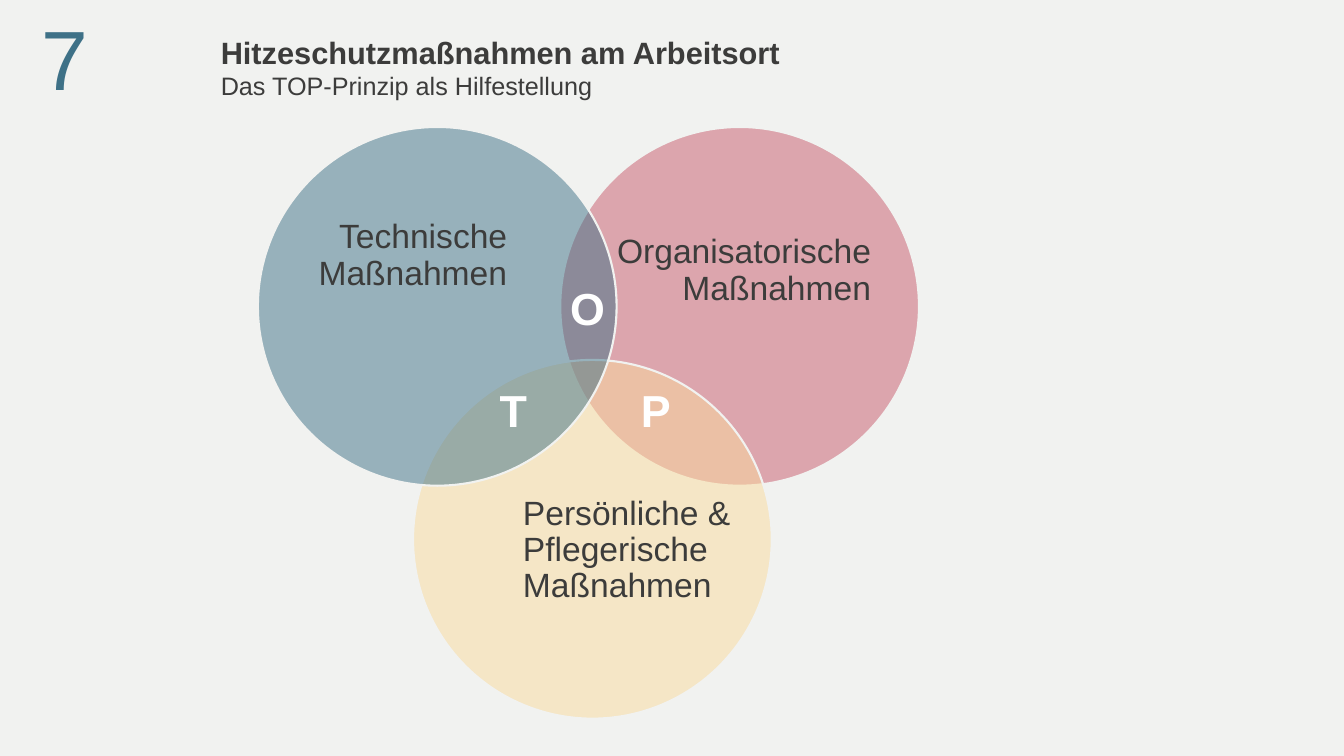
import pptx
import pptx.dml.color
import pptx.enum.shapes
import pptx.enum.text
import pptx.oxml
import pptx.oxml.ns
import pptx.util

Cm = pptx.util.Cm
Pt = pptx.util.Pt
RGBColor = pptx.dml.color.RGBColor
Anchor = pptx.enum.text.MSO_ANCHOR
Align = pptx.enum.text.PP_ALIGN

PAPER = RGBColor(0xF1, 0xF2, 0xF0)
INK = RGBColor(0x3C, 0x3C, 0x3B)
WHITE = RGBColor(0xFF, 0xFF, 0xFF)
BLUE = RGBColor(0x3E, 0x71, 0x87)
RED = RGBColor(0xC9, 0x59, 0x6C)
YELLOW = RGBColor(0xFA, 0xDC, 0x9E)

CHAPTER = "7"
HEADING = [("Hitzeschutzmaßnahmen am Arbeitsort", 22, True),
           ("Das TOP-Prinzip als Hilfestellung", 18, False)]

# Lengths in centimetres
DIAMETER = 9.04
# circle left and top, colour, label, label area, anchor, alignment; back to front
CIRCLES = [
    (14.12, 3.2, RED, "Organisatorische Maßnahmen",
     (15.32, 4.8, 6.63, 4.06), Anchor.MIDDLE, Align.RIGHT),
    (10.41, 9.07, YELLOW, "Persönliche & Pflegerische Maßnahmen",
     (13.18, 11.38, 5.41, 4.98), Anchor.MIDDLE, Align.LEFT),
    (6.5, 3.2, BLUE, "Technische Maßnahmen",
     (7.37, 5.54, 5.41, 4.98), Anchor.TOP, Align.RIGHT),
]

LETTER_LEFT, LETTER_STEP = 14.12, 1.78
UPPER_ROW, LOWER_ROW = 6.96, 9.53
# letter, steps from the middle, top
LETTERS = [("O", 0, UPPER_ROW), ("P", 1, LOWER_ROW), ("T", -1, LOWER_ROW)]


def add_span(para, text, size, color, bold=False):
    span = para.add_run()
    span.text = text
    span.font.name = "Arial"
    span.font.size = Pt(size)
    span.font.bold = bold
    span.font.color.rgb = color


def add_text(page, area, text, size, color, bold=False):
    box = page.shapes.add_textbox(*[Cm(length) for length in area])
    box.text_frame.word_wrap = True
    add_span(box.text_frame.paragraphs[0], text, size, color, bold)
    return box.text_frame


def add_heading(page):
    title = page.shapes.title
    title.left, title.top, title.width, title.height = Cm(5.31), Cm(0.71), Cm(24.33), Cm(1.96)
    frame = title.text_frame
    frame.auto_size = pptx.enum.text.MSO_AUTO_SIZE.NONE
    frame.vertical_anchor = Anchor.TOP
    for index, (text, size, bold) in enumerate(HEADING):
        para = frame.add_paragraph() if index else frame.paragraphs[0]
        para.alignment = Align.LEFT
        add_span(para, text, size, INK, bold)


def add_circle(page, left, top, color):
    circle = page.shapes.add_shape(pptx.enum.shapes.MSO_SHAPE.OVAL,
                                   Cm(left), Cm(top), Cm(DIAMETER), Cm(DIAMETER))
    circle.shadow.inherit = False
    circle.fill.solid()
    circle.fill.fore_color.rgb = color
    tint = circle.fill._xPr.find(".//" + pptx.oxml.ns.qn("a:srgbClr"))
    tint.append(pptx.oxml.parse_xml(
        f'<a:alpha {pptx.oxml.ns.nsdecls("a")} val="50000"/>'))
    circle.line.color.rgb = PAPER
    circle.line.width = Pt(1.5)


def add_label(page, text, area, anchor, alignment):
    frame = add_text(page, area, text, 24, INK)
    frame.margin_left = frame.margin_right = frame.margin_top = frame.margin_bottom = 0
    frame.vertical_anchor = anchor
    frame.paragraphs[0].alignment = alignment
    frame.paragraphs[0].line_spacing = 0.9


def main():
    deck = pptx.Presentation()
    deck.slide_width, deck.slide_height = Cm(33.87), Cm(19.05)
    page = deck.slides.add_slide(deck.slide_layouts.get_by_name("Title Only"))
    page.background.fill.solid()
    page.background.fill.fore_color.rgb = PAPER

    add_heading(page)
    add_text(page, (0.79, 0.05, 1.65, 2.82), CHAPTER, 60, BLUE)
    for left, top, color, text, area, anchor, alignment in CIRCLES:
        add_circle(page, left, top, color)
        add_label(page, text, area, anchor, alignment)
    for letter, steps, top in LETTERS:
        area = (LETTER_LEFT + steps * LETTER_STEP, top, 0.66, 1.63)
        add_text(page, area, letter, 32, WHITE, bold=True)

    deck.save("out.pptx")


if __name__ == "__main__":
    main()
